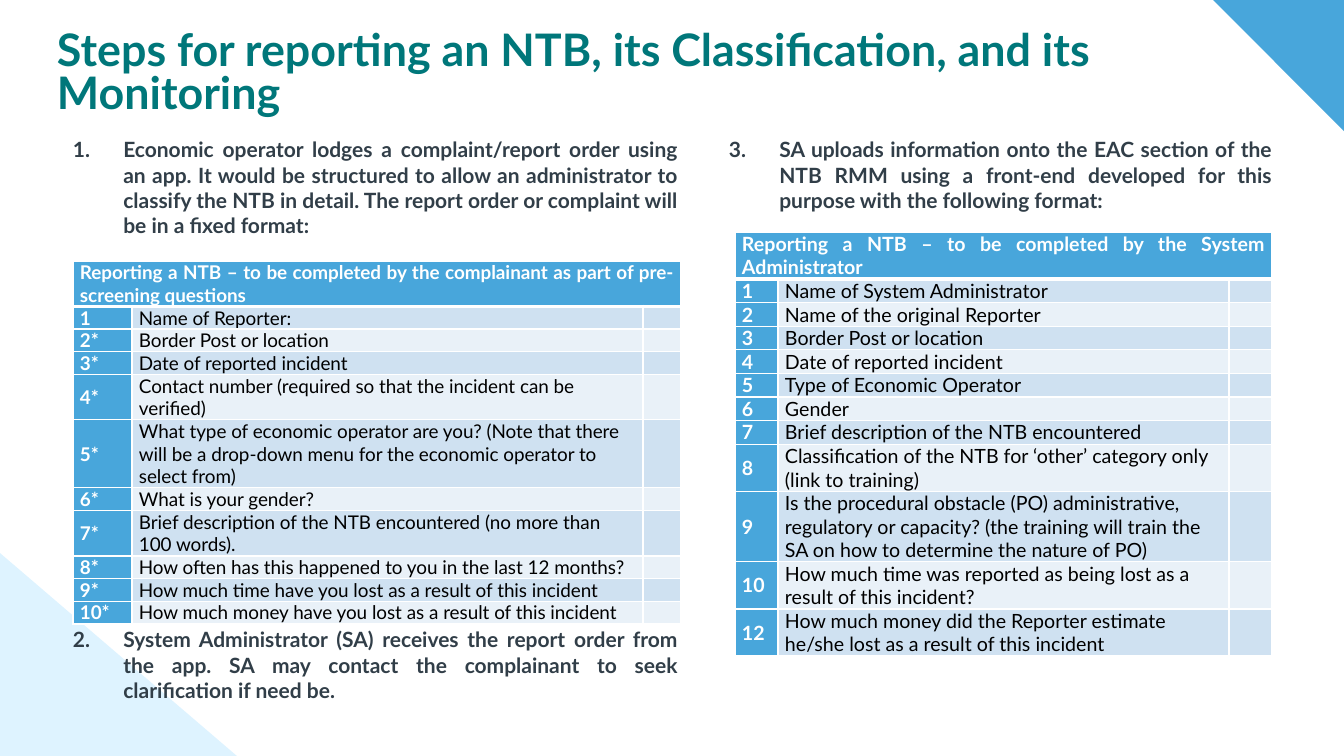
from dataclasses import dataclass

from lxml import etree
from pptx import Presentation
from pptx import util as u
from pptx.dml.color import RGBColor
from pptx.enum import shapes, text
from pptx.oxml import ns

PX = 12192000 / 1344  # EMU in one px


def px(n):
    return u.Emu(round(n * PX))


@dataclass(frozen=True)
class Theme:
    font: str = "Lato"
    blue: str = "48A6DB"
    pale: str = "DEF3FF"
    teal: str = "00777A"
    ink: str = "313E48"
    black: str = "000000"
    white: str = "FFFFFF"
    bands: tuple = ("CFE1F1", "E9F1F8")
    title: float = 32
    step: float = 15
    left_table: float = 13.5
    right_table: float = 14


class Deck:
    def __init__(self, theme):
        self.t = theme
        self.prs = Presentation()
        self.prs.slide_width, self.prs.slide_height = px(1344), px(756)
        self.s = self.prs.slides.add_slide(self.prs.slide_layouts[6])

    def triangle(self, box, color, rotation=0):
        sp = self.s.shapes.add_shape(shapes.MSO_SHAPE.RIGHT_TRIANGLE, *map(px, box))
        sp.rotation = rotation
        sp.shadow.inherit = False
        sp.fill.solid()
        sp.fill.fore_color.rgb = RGBColor.from_string(color)
        sp.line.fill.background()

    def run(self, p, words, size, color, bold=True):
        r = p.add_run()
        r.text = words
        style = {"name": self.t.font, "size": u.Pt(size), "bold": bold}
        for key, value in style.items():
            setattr(r.font, key, value)
        r.font.color.rgb = RGBColor.from_string(color)

    def textbox(self, box):
        tf = self.s.shapes.add_textbox(*map(px, box)).text_frame
        tf.word_wrap = True
        return tf

    def title(self, box, words):
        tf = self.textbox(box)
        for side in ("left", "top", "right", "bottom"):
            setattr(tf, f"margin_{side}", 0)
        p = tf.paragraphs[0]
        p.line_spacing = 0.8
        self.run(p, words, self.t.title, self.t.teal)

    def step(self, box, number, words):
        p = self.textbox(box).paragraphs[0]
        pPr = p._p.get_or_add_pPr()
        pPr.set("marL", str(u.Inches(0.5)))
        pPr.set("indent", str(-u.Inches(0.5)))
        etree.SubElement(pPr, ns.qn("a:buAutoNum"), type="arabicPeriod", startAt=str(number))
        p.alignment = text.PP_ALIGN.JUSTIFY
        self.run(p, words, self.t.step, self.t.ink)

    def borders(self, cell, bottom=1):
        tcPr = cell._tc.get_or_add_tcPr()
        for side, width in (("L", 1), ("R", 1), ("T", 1), ("B", bottom)):
            ln = etree.SubElement(tcPr, ns.qn(f"a:ln{side}"), w=str(u.Pt(width)))
            fill = etree.SubElement(ln, ns.qn("a:solidFill"))
            etree.SubElement(fill, ns.qn("a:srgbClr"), val=self.t.white)

    def cell(self, cell, words, size, fill, color, bold, bottom=1):
        style = {"margin_left": px(7), "margin_right": px(7),
                 "margin_top": 0, "margin_bottom": 0,
                 "vertical_anchor": text.MSO_ANCHOR.MIDDLE}
        for key, value in style.items():
            setattr(cell, key, value)
        self.borders(cell, bottom)
        cell.fill.solid()
        cell.fill.fore_color.rgb = RGBColor.from_string(fill)
        p = cell.text_frame.paragraphs[0]
        if words:
            self.run(p, words, size, color, bold)
        else:
            etree.SubElement(p._p, ns.qn("a:endParaRPr"), sz=str(round(size * 100)))

    def table(self, left, top, widths, line, size, heading, rows):
        """Each row is (label, question, number of text lines)."""
        t = self.t
        heights = [2 * line] + [n * line for _, _, n in rows]
        box = (left, top, sum(widths), sum(heights))
        tbl = self.s.shapes.add_table(len(heights), 3, *map(px, box)).table
        for col, width in zip(tbl.columns, widths):
            col.width = px(width)
        for row, height in zip(tbl.rows, heights):
            row.height = px(height)

        # Heading row
        for i, words in enumerate((heading, "", "")):
            self.cell(tbl.cell(0, i), words, size, t.blue, t.white, True, bottom=3)
        tbl.cell(0, 0).merge(tbl.cell(0, 2))
        tbl.cell(0, 0).vertical_anchor = text.MSO_ANCHOR.TOP
        tbl.cell(0, 0).text_frame.paragraphs[0].alignment = text.PP_ALIGN.JUSTIFY

        # Numbered questions with an empty answer column
        for i, (label, question, _) in enumerate(rows, 1):
            band = t.bands[(i - 1) % 2]
            self.cell(tbl.cell(i, 0), label, size, t.blue, t.white, True)
            self.cell(tbl.cell(i, 1), question, size, band, t.black, False)
            self.cell(tbl.cell(i, 2), "", size, band, t.black, False)


REPORTER_ROWS = [
    ("1", "Name of Reporter:", 1),
    ("2*", "Border Post or location", 1),
    ("3*", "Date of reported incident", 1),
    ("4*", "Contact number (required so that the incident can be verified)", 2),
    ("5*", "What type of economic operator are you? (Note that there will be a "
           "drop-down menu for the economic operator to select from)", 3),
    ("6*", "What is your gender?", 1),
    ("7*", "Brief description of the NTB encountered (no more than 100 words).", 2),
    ("8*", "How often has this happened to you in the last 12 months?", 1),
    ("9*", "How much time have you lost as a result of this incident", 1),
    ("10*", "How much money have you lost as a result of this incident", 1),
]

ADMIN_ROWS = [
    ("1", "Name of System Administrator", 1),
    ("2", "Name of the original Reporter", 1),
    ("3", "Border Post or location", 1),
    ("4", "Date of reported incident", 1),
    ("5", "Type of Economic Operator", 1),
    ("6", "Gender", 1),
    ("7", "Brief description of the NTB encountered", 1),
    ("8", "Classification of the NTB for ‘other’ category only (link to training)", 2),
    ("9", "Is the procedural obstacle (PO) administrative, regulatory or capacity? "
          "(the training will train the SA on how to determine the nature of PO)", 3),
    ("10", "How much time was reported as being lost as a result of this incident?", 2),
    ("12", "How much money did the Reporter estimate he/she lost as a result of "
           "this incident", 2),
]


def main():
    theme = Theme()
    deck = Deck(theme)

    # Corner triangles and title
    deck.triangle((1213, 0, 131, 131), theme.blue, rotation=180)
    deck.triangle((0, 553, 237, 203), theme.pale)
    deck.title((57, 32, 1124, 87),
               "Steps for reporting an NTB, its Classification, and its Monitoring")

    # Left column: complaint and screening
    deck.step((63, 132, 625, 111), 1,
              "Economic operator lodges a complaint/report order using an app. It would be "
              "structured to allow an administrator to classify the NTB in detail. The report "
              "order or complaint will be in a fixed format:")
    deck.table(73, 261, (59, 511, 38), 22, theme.left_table,
               "Reporting a NTB – to be completed by the complainant as part of "
               "pre-screening questions", REPORTER_ROWS)
    deck.step((63, 622, 625, 86), 2,
              "System Administrator (SA) receives the report order from the app. SA may "
              "contact the complainant to seek clarification if need be.")

    # Right column: upload by the administrator
    deck.step((719, 132, 563, 86), 3,
              "SA uploads information onto the EAC section of the NTB RMM using a front-end "
              "developed for this purpose with the following format:")
    deck.table(735, 232, (43, 451, 43), 23, theme.right_table,
               "Reporting a NTB – to be completed by the System Administrator", ADMIN_ROWS)

    deck.prs.save("out.pptx")


if __name__ == "__main__":
    main()
